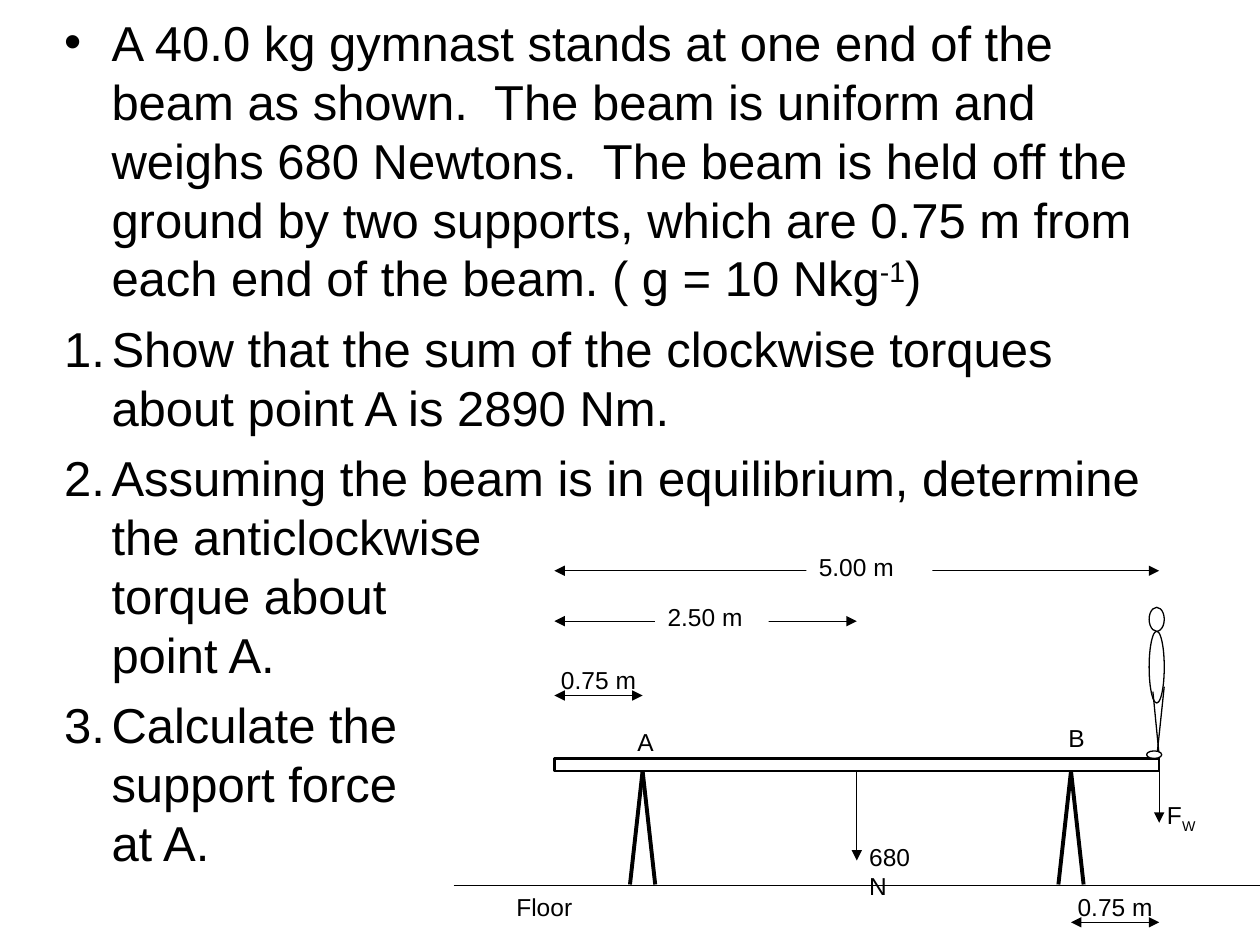
import pptx
import pptx.util
import pptx.dml.color
import pptx.enum.shapes
import pptx.enum.text
import pptx.oxml.ns
import lxml.etree

BLACK = pptx.dml.color.RGBColor(0, 0, 0)
WHITE = pptx.dml.color.RGBColor(255, 255, 255)
COLS, ROWS = 100, 75
SHAPE = pptx.enum.shapes.MSO_SHAPE
qn = pptx.oxml.ns.qn


class Sheet:
    """Style and current slide; lengths are columns and rows of the grid."""
    font, body_size, label_size = "Arial", 28, 14
    thin, medium, thick = 0.75, 1.5, 2.25

    def __init__(self, prs):
        self.col = prs.slide_width / COLS
        self.row = prs.slide_height / ROWS
        self.s = prs.slides.add_slide(prs.slide_layouts[1])
        title = self.s.shapes.title
        title.element.getparent().remove(title.element)
        self.drawing = self.s.shapes.add_group_shape().shapes

    def grid(self, *values):
        units = (self.col, self.row)
        return [round(v * units[i % 2]) for i, v in enumerate(values)]

    def style(self, p, size):
        for r in p.runs:
            r.font.name, r.font.size = self.font, pptx.util.Pt(size)
            r.font.color.rgb = BLACK
        for br in p._p.findall(qn("a:br")):
            rpr = lxml.etree.SubElement(br, qn("a:rPr"))
            rpr.set("sz", str(size * 100))

    def offset_run(self, p, text, percent):
        r = p.add_run()
        r.text = text
        r.font._element.set("baseline", str(percent * 1000))

    def body(self, box, items):
        """Fill the body placeholder with (bullet, parts) items."""
        sp = self.s.placeholders[1]
        sp.left, sp.top, sp.width, sp.height = self.grid(*box)
        tf = sp.text_frame
        tf.auto_size = pptx.enum.text.MSO_AUTO_SIZE.NONE
        for i, (bullet, parts) in enumerate(items):
            p = tf.paragraphs[0] if i == 0 else tf.add_paragraph()
            p.text = parts[0]
            for text, percent in parts[1:]:
                self.offset_run(p, text, percent)
            self.style(p, self.body_size)
            p.space_before = pptx.util.Pt(6.6)
            ppr = p._p.get_or_add_pPr()
            indent = self.grid(3.75)[0]
            ppr.set("marL", str(indent))
            ppr.set("indent", str(-indent))
            lxml.etree.SubElement(ppr, qn("a:buFont")).set("typeface", self.font)
            if bullet == "•":
                lxml.etree.SubElement(ppr, qn("a:buChar")).set("char", bullet)
            else:
                lxml.etree.SubElement(ppr, qn("a:buAutoNum")).set("type", bullet)

    def shape(self, kind, box, width):
        sp = self.drawing.add_shape(kind, *self.grid(*box))
        sp.shadow.inherit = False
        sp.fill.solid()
        sp.fill.fore_color.rgb = WHITE
        sp.line.color.rgb = BLACK
        sp.line.width = pptx.util.Pt(width)
        return sp

    def line(self, start, end, width=thin, heads=()):
        """Heads holds "headEnd" (at start) and/or "tailEnd" (at end)."""
        cx = self.drawing.add_connector(pptx.enum.shapes.MSO_CONNECTOR.STRAIGHT,
                                        *self.grid(*start, *end))
        cx.line.color.rgb = BLACK
        cx.line.width = pptx.util.Pt(width)
        ln = cx.line._get_or_add_ln()
        for head in heads:
            lxml.etree.SubElement(ln, qn("a:" + head)).set("type", "triangle")
        lxml.etree.SubElement(cx._element.spPr, qn("a:effectLst"))
        return cx

    def force(self, start, length):
        x, y = start
        return self.line(start, (x, y + length), heads=["tailEnd"])

    def dimension(self, left, right, y):
        self.line((left, y), (right, y), heads=["headEnd", "tailEnd"])

    def label(self, text, x, y, width, filled=False, sub=None):
        sp = self.drawing.add_textbox(*self.grid(x, y, width, 3.3))
        if filled:
            sp.fill.solid()
            sp.fill.fore_color.rgb = WHITE
        tf = sp.text_frame
        tf.word_wrap = True
        p = tf.paragraphs[0]
        p.text = text
        if sub:
            self.offset_run(p, sub, -30)
        self.style(p, self.label_size)


def main():
    prs = pptx.Presentation()
    prs.slide_width, prs.slide_height = pptx.util.Inches(10), pptx.util.Inches(7.5)
    sheet = Sheet(prs)

    # Problem and questions
    sheet.body((4.1, 0.5, 90, 49.5), [
        ("•", ["A 40.0 kg gymnast stands at one end of the beam as shown.  "
               "The beam is uniform and weighs 680 Newtons.  The beam is held off "
               "the ground by two supports, which are 0.75 m from each end of the "
               "beam. ( g = 10 Nkg", ("-1", 30), (")", 0)]),
        ("arabicPeriod", ["Show that the sum of the clockwise torques about point A "
                          "is 2890 Nm."]),
        ("arabicPeriod", ["Assuming the beam is in equilibrium, determine "
                          "the anticlockwise\vtorque about\vpoint A."]),
        ("arabicPeriod", ["Calculate the\vsupport force\vat A."]),
    ])

    # Beam on its two supports
    left, right, top, bottom, floor = 44, 92, 60.2, 61.2, 70.3
    middle = (left + right) / 2
    support_a, support_b = left + 7, right - 7
    beam = sheet.shape(SHAPE.RECTANGLE, (left, top, right - left, bottom - top),
                       sheet.medium)
    for x in (support_a, support_b):
        for spread in (-1, 1):
            sheet.line((x, bottom), (x + spread, floor - 0.1), sheet.thick)

    # Gymnast: body, head, legs, foot
    for box in ((91.2, 50.1, 1.2, 5.7), (91.2, 48.2, 1.2, 1.9)):
        sheet.shape(SHAPE.OVAL, box, sheet.thin)
    sheet.line((91.5, 54.9), (92, 60))
    sheet.line((92.4, 54.5), (91.8, top))
    sheet.shape(SHAPE.OVAL, (91, 59.6, 1.2, 0.6), sheet.thin)

    # Dimensions, with labels over the arrows
    sheet.dimension(left, right, 45.3)
    sheet.dimension(left, middle, 49.3)
    sheet.dimension(left, support_a, 55.2)
    sheet.dimension(support_b, right, 73.2)
    sheet.label("5.00 m", 64, 43.3, 10, filled=True)
    sheet.label("2.50 m", 52, 47.3, 9, filled=True)
    sheet.label(" 0.75 m", left - 1, 52.3, 10)
    sheet.label(" 0.75 m", support_b - 1, floor, 10)

    # Forces
    sheet.force((middle, bottom), 7.1).begin_connect(beam, 2)
    sheet.force((right, top + 0.1), 5)
    sheet.label("680 N", middle, 66.3, 7)
    sheet.label(" F", 91.1, 63, 7, sub="W")

    # Support names and floor
    sheet.label("A", 49.6, 57.2, 4.2)
    sheet.label("B", 83.8, 56.9, 4.2)
    sheet.line((36, floor), (102, floor))
    sheet.label("Floor", 40, floor, 7)

    prs.save("out.pptx")


if __name__ == "__main__":
    main()
